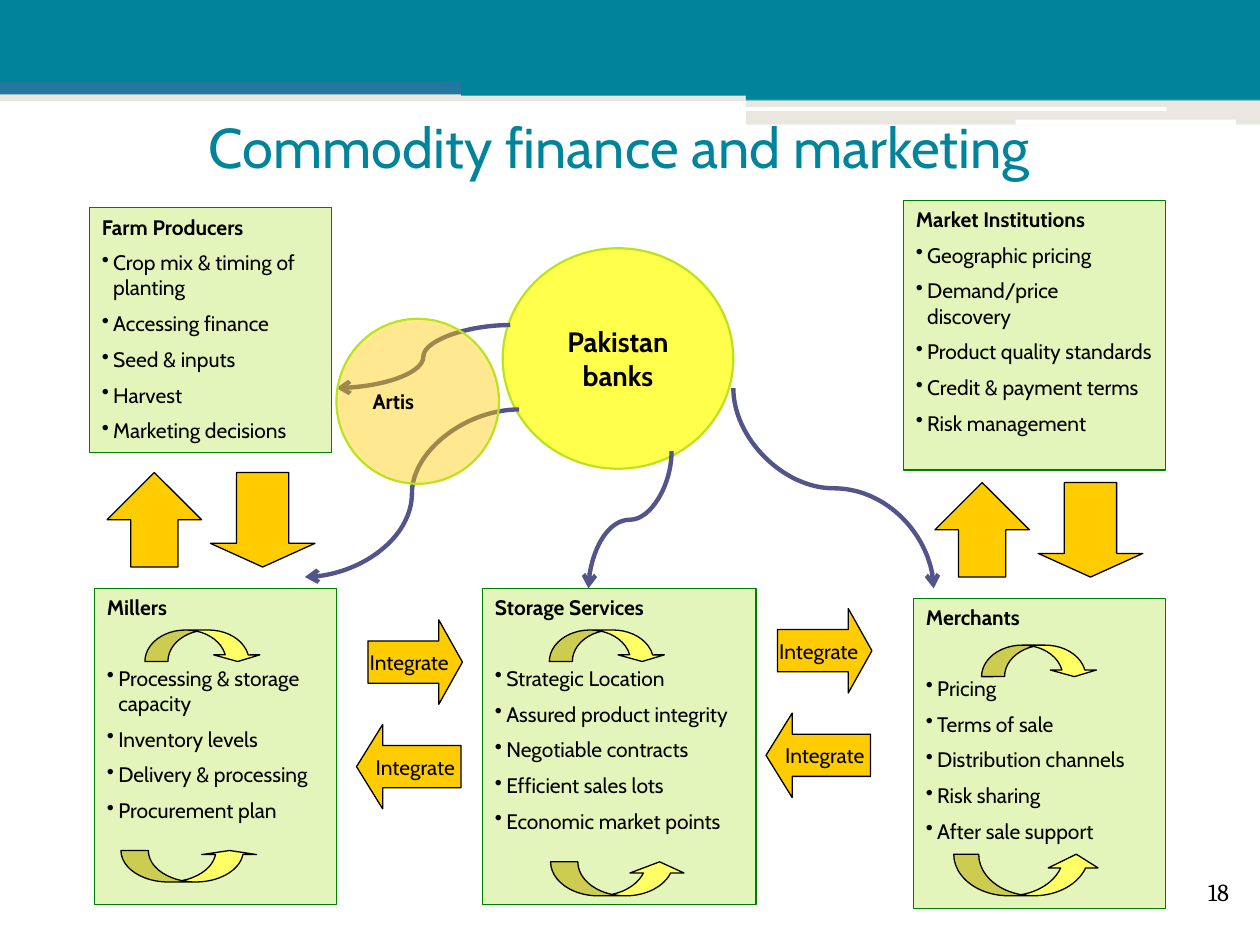
from dataclasses import dataclass
from lxml.etree import SubElement
from pptx import Presentation
from pptx.dml.color import RGBColor
from pptx.enum.shapes import MSO_CONNECTOR as Link, MSO_SHAPE as Kind
from pptx.enum.text import MSO_ANCHOR as Anchor, PP_ALIGN as Align
from pptx.oxml.ns import qn
from pptx.util import Pt

PX = 9144  # EMU per px, 100 px to the inch


@dataclass(frozen=True)
class Theme:
    font: str = "Cabin"
    serif: str = "Cambria"
    teal: str = "00849B"
    blue: str = "22789E"
    sand: str = "D4D0C1"
    white: str = "FFFFFF"
    black: str = "000000"
    gold: str = "FFCC00"
    lemon: str = "FFFF66"
    yellow: str = "FFFF00"
    lime: str = "B0E53B"
    rim: str = "B9E41C"
    green: str = "008000"
    violet: str = "53548A"
    body: int = 12
    page: int = 14
    bank: int = 16
    title: int = 32
    gap: int = 6
    room: int = 26  # space that leaves place for the curved arrow


T = Theme()


def emu(*vals):
    return [round(v * PX) for v in vals]


def style(para, size=T.body, bold=False, color=T.black, font=T.font):
    for run in para.runs:
        run.font.name = font
        run.font.size = Pt(size)
        run.font.bold = bold
        run.font.color.rgb = RGBColor.from_string(color)


def draw(slide, kind, box, fill, line=None, width=0.75, alpha=100, adj=()):
    shape = slide.shapes.add_shape(kind, *emu(*box))
    shape.shadow.inherit = False
    for i, val in enumerate(adj):
        shape.adjustments[i] = val
    shape.fill.solid()
    shape.fill.fore_color.rgb = RGBColor.from_string(fill)
    if alpha < 100:
        tint = shape._element.spPr.find(qn("a:solidFill"))[0]
        SubElement(tint, qn("a:alpha"), val=str(alpha * 1000))
    if line:
        shape.line.color.rgb = RGBColor.from_string(line)
        shape.line.width = Pt(width)
    else:
        shape.line.fill.background()
    return shape


def label(shape, text, align=Align.CENTER, wrap=True, **look):
    frame = shape.text_frame
    frame.text = text
    frame.word_wrap = wrap
    frame.vertical_anchor = Anchor.MIDDLE
    frame.paragraphs[0].alignment = align
    style(frame.paragraphs[0], **look)


def note(slide, box, text, align, **look):
    label(slide.shapes.add_textbox(*emu(*box)), text, align, **look)


def bullet(para):
    props = para._p.get_or_add_pPr()
    dent = 9 * PX
    props.set("marL", str(dent))
    props.set("indent", str(-dent))
    SubElement(props, qn("a:buChar"), char="•")


def panel(slide, box, head, items, gap=T.gap):
    """Green box with a heading; gap is the space under that heading."""
    shape = draw(slide, Kind.RECTANGLE, box, T.lime, T.green, alpha=35)
    frame = shape.text_frame
    frame.word_wrap = True
    frame.vertical_anchor = Anchor.TOP
    para = frame.paragraphs[0]
    para.text = head
    para.alignment = Align.LEFT
    style(para, bold=True)
    for i, item in enumerate(items):
        para = frame.add_paragraph()
        bullet(para)
        para.text = item
        para.alignment = Align.LEFT
        para.space_before = Pt(T.gap if i else gap)
        style(para)


def curve(slide, start, end, down=False):
    """Curved arrow that leaves sideways, or downward when down is set."""
    (x1, y1), (x2, y2) = start, end
    if down:  # laid out a quarter turn back, then rotated
        cx, cy = (x1 + x2) / 2, (y1 + y2) / 2
        dx, dy = x1 - cx, y1 - cy
        x1, y1, x2, y2 = cx + dy, cy - dx, cx - dy, cy + dx
    link = slide.shapes.add_connector(Link.CURVE, *emu(x1, y1, x2, y2))
    link.line.color.rgb = RGBColor.from_string(T.violet)
    link.line.width = Pt(2.5)
    props = link._element.spPr
    SubElement(props.find(qn("a:ln")), qn("a:tailEnd"), type="arrow")
    SubElement(props, qn("a:effectLst"))
    if down:
        props.find(qn("a:xfrm")).set("rot", "5400000")


def header(slide):
    rect, bar = Kind.RECTANGLE, Kind.ROUNDED_RECTANGLE
    for kind, box, fill, alpha in (
        (rect, (0, 71, 1000, 9), T.sand, 50),
        (rect, (0, 0, 1000, 65), T.teal, 100),
        (rect, (0, 65, 1000, 10), T.blue, 100),
        (rect, (592, 70, 408, 10), T.teal, 100),
        (rect, (592, 79, 408, 20), T.sand, 50),
        (bar, (591, 85, 335, 3), T.white, 100),
        (bar, (806, 95, 175, 4), T.white, 100),
        (rect, (366, 0, 634, 76), T.teal, 100),
    ):
        draw(slide, kind, box, fill, alpha=alpha)


def flows(slide):
    """Block arrows between neighbouring panels."""
    for x, y in ((292, 492), (617, 483)):
        pair = ((Kind.RIGHT_ARROW, (x, y, 75, 67), 0.28),
                (Kind.LEFT_ARROW, (x - 9, y + 83, 83, 67), 0.31))
        for kind, box, tip in pair:
            arrow = draw(slide, kind, box, T.gold, T.black, adj=(0.5, tip))
            label(arrow, "Integrate", wrap=False)
    for x, y in ((85, 375), (742, 383)):
        draw(slide, Kind.UP_ARROW, (x, y, 75, 75), T.gold, T.black)
        draw(slide, Kind.DOWN_ARROW, (x + 82, y, 83, 75), T.gold, T.black,
             adj=(0.5, 0.25))


def panels(slide):
    panel(slide, (725, 475, 200, 246), "Merchants",
          ("Pricing", "Terms of sale", "Distribution channels",
           "Risk sharing", "After sale support"), T.room)
    panel(slide, (75, 467, 192, 251), "Millers",
          ("Processing & storage capacity", "Inventory levels",
           "Delivery & processing", "Procurement plan"), T.room)
    panel(slide, (383, 467, 217, 251), "Storage Services",
          ("Strategic Location", "Assured product integrity",
           "Negotiable contracts", "Efficient sales lots",
           "Economic market points"), T.room)
    panel(slide, (71, 165, 192, 194), "Farm Producers",
          ("Crop mix & timing of planting", "Accessing finance",
           "Seed & inputs", "Harvest", "Marketing decisions"))
    panel(slide, (717, 159, 208, 214), "Market Institutions",
          ("Geographic pricing", "Demand/price\vdiscovery",
           "Product quality standards", "Credit & payment terms",
           "Risk management"))


def cycles(slide):
    """Curved arrows at the top and foot of the lower panels."""
    for x, y in ((115, 500), (436, 500), (779, 512)):
        draw(slide, Kind.CURVED_DOWN_ARROW, (x, y, 92, 25), T.lemon, T.black,
             adj=(0.73, 1.47, 0.21))
    for box, adj in (((96, 675, 108, 25), (0.87, 1.74, 0.13)),
                     ((437, 684, 108, 27), (0.8, 1.59, 0.33)),
                     ((757, 678, 117, 33), (0.6, 1.2, 0.33))):
        draw(slide, Kind.CURVED_UP_ARROW, box, T.lemon, T.black, adj=adj)


def banks(slide):
    bank = draw(slide, Kind.OVAL, (399, 197, 183, 175), T.yellow, T.rim,
                1.25, 70)
    label(bank, "Pakistan banks", size=T.bank, bold=True)
    curve(slide, (533, 358), (467, 467), down=True)
    curve(slide, (582, 308), (741, 467), down=True)
    curve(slide, (412, 325), (242, 458))
    curve(slide, (405, 258), (267, 308))
    artis = draw(slide, Kind.OVAL, (267, 253, 129, 131), T.gold, T.rim,
                 1.25, 44)
    label(artis, "Artis", Align.LEFT, bold=True)


def main():
    deck = Presentation()
    deck.slide_width, deck.slide_height = emu(1000, 750)
    slide = deck.slides.add_slide(deck.slide_layouts[6])
    header(slide)
    flows(slide)
    panels(slide)
    note(slide, (120, 84, 744, 64), "Commodity finance and marketing",
         Align.CENTER, size=T.title, color=T.teal)
    cycles(slide)
    banks(slide)
    note(slide, (949, 688, 39, 40), "18", Align.LEFT, size=T.page,
         font=T.serif)
    deck.save("out.pptx")


if __name__ == "__main__":
    main()
